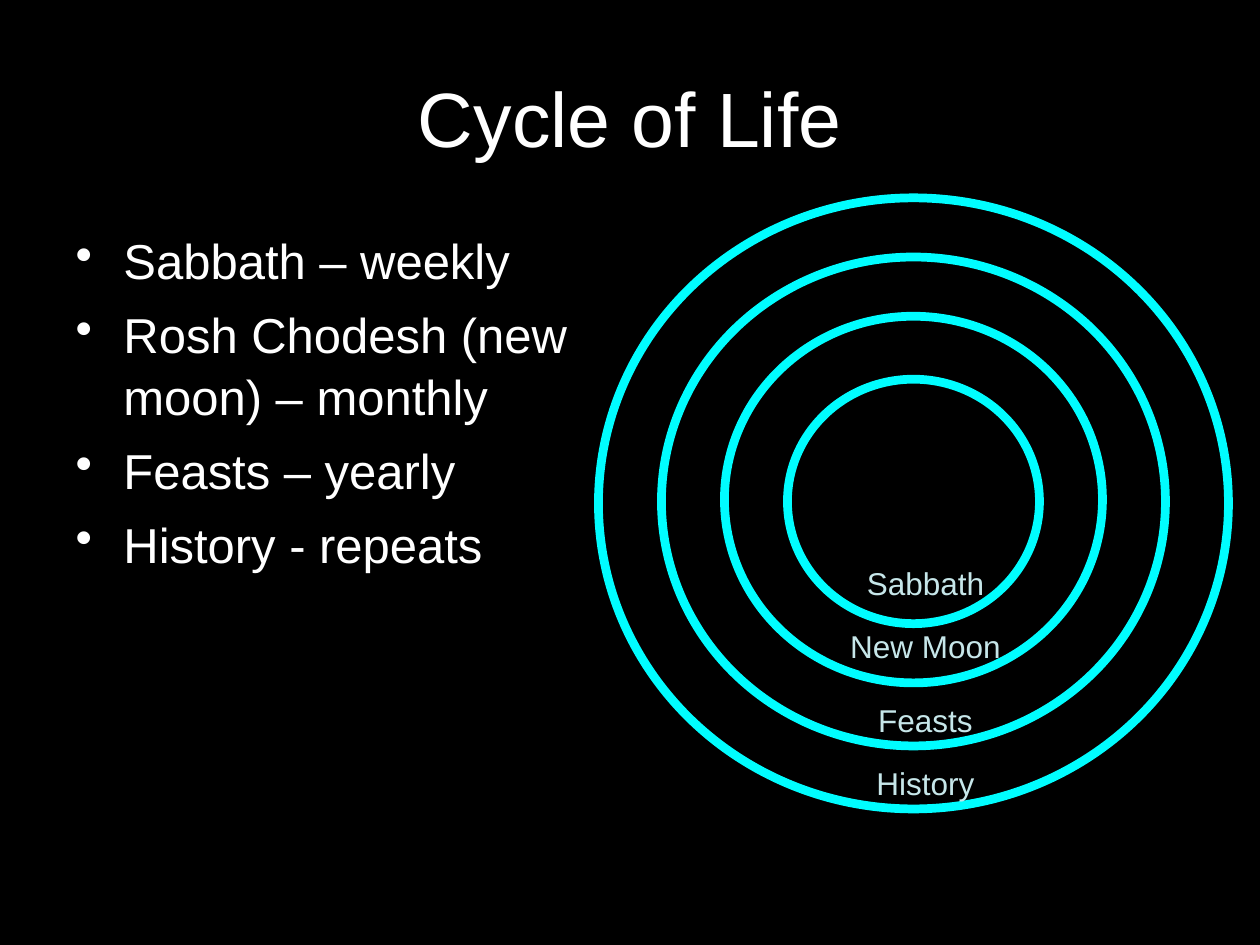
import pptx
import pptx.util
import pptx.dml.color
import pptx.enum.shapes
import pptx.enum.text
import lxml.etree

HUES = {"back": "000000", "text": "FFFFFF", "ring": "00FDFF", "label": "C6E6E9"}
CELL = pptx.util.Inches(0.25)  # the slide is a grid of 40 columns and 30 rows
ALIGN = pptx.enum.text.PP_ALIGN
ANCHOR = pptx.enum.text.MSO_ANCHOR


def hue(name):
    return pptx.dml.color.RGBColor.from_string(HUES[name])


def write(shape, box, lines, size, color, align, anchor=ANCHOR.TOP):
    """Place a text shape on the grid and fill it, one paragraph a line."""
    shape.left, shape.top, shape.width, shape.height = [round(n * CELL) for n in box]
    frame = shape.text_frame
    frame.word_wrap = True
    frame.vertical_anchor = anchor
    frame.margin_left = frame.margin_right = pptx.util.Inches(0.06)
    frame.margin_top = frame.margin_bottom = pptx.util.Inches(0.06)
    for i, line in enumerate(lines):
        para = frame.add_paragraph() if i else frame.paragraphs[0]
        para.alignment = align
        run = para.add_run()
        run.text = line
        run.font.name = "Arial"
        run.font.size = pptx.util.Pt(size)
        run.font.color.rgb = hue(color)
    return frame


deck = pptx.Presentation()
deck.slide_width, deck.slide_height = 40 * CELL, 30 * CELL
slide = deck.slides.add_slide(deck.slide_layouts[5])
slide.background.fill.solid()
slide.background.fill.fore_color.rgb = hue("back")
shapes = slide.shapes

write(shapes.title, (2, 0.4, 36, 6.6), ["Cycle of Life"], 44, "text",
      ALIGN.CENTER, ANCHOR.MIDDLE)

# Bulleted list
points = ["Sabbath – weekly", "Rosh Chodesh (new moon) – monthly",
          "Feasts – yearly", "History - repeats"]
body = write(shapes.add_textbox(0, 0, 0, 0), (2, 7, 17.68, 23), points, 28,
             "text", ALIGN.LEFT)
for para in body.paragraphs:
    para.space_before = pptx.util.Pt(7)
    para.line_spacing = 1.05
    props = para._p.get_or_add_pPr()
    props.set("marL", str(pptx.util.Inches(0.42)))
    props.set("indent", str(pptx.util.Inches(-0.38)))
    mark = lxml.etree.SubElement(props, pptx.oxml.ns.qn("a:buChar"))
    mark.set("char", "•")

# Rings around column 29, from the inside out
for i, top in enumerate([12.04, 10.04, 8.16, 6.28]):
    wide = 8 + 4 * i
    box = (29 - wide / 2, top, wide, 0.97 * wide)
    ring = shapes.add_shape(pptx.enum.shapes.MSO_SHAPE.OVAL,
                            *[round(n * CELL) for n in box])
    ring.shadow.inherit = False
    ring.fill.background()
    ring.line.color.rgb = hue("ring")
    ring.line.width = pptx.util.Pt(5)

# Ring labels
labels = {"Sabbath": 17.68, "New Moon": 19.68, "Feasts": 22, "History": 24}
for name, top in labels.items():
    write(shapes.add_textbox(0, 0, 0, 0), (25.68, top, 7.4, 1.56), [name], 18,
          "label", ALIGN.CENTER)

deck.save("out.pptx")
